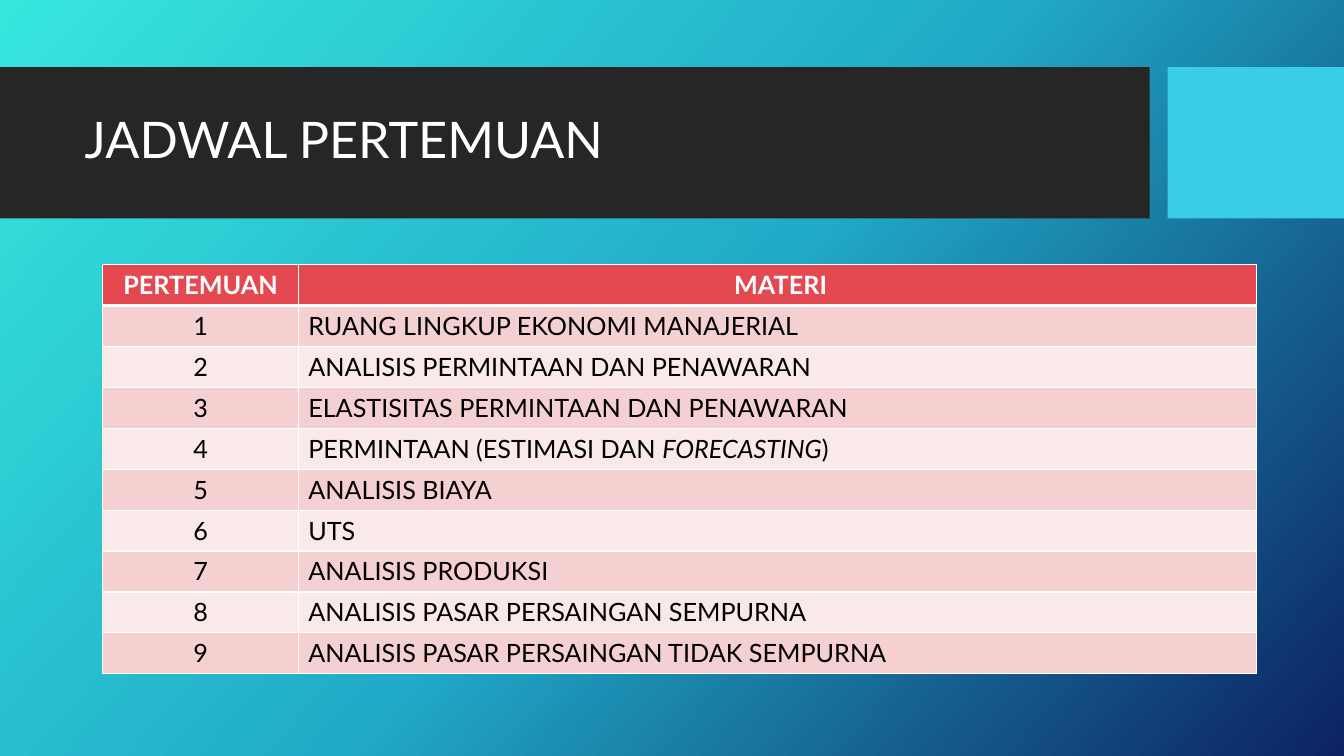
from copy import deepcopy
from dataclasses import dataclass

from lxml import etree
from pptx import Presentation
from pptx.dml.color import RGBColor
from pptx.enum.shapes import MSO_SHAPE
from pptx.enum.text import MSO_ANCHOR, MSO_AUTO_SIZE, PP_ALIGN
from pptx.oxml.ns import qn
from pptx.slide import Slide
from pptx.table import _Cell
from pptx.text.text import Font
from pptx.util import Emu, Pt

RECTANGLE = MSO_SHAPE.RECTANGLE
MIDDLE = MSO_ANCHOR.MIDDLE
NO_AUTOFIT = MSO_AUTO_SIZE.NONE
LEFT = PP_ALIGN.LEFT
CENTER = PP_ALIGN.CENTER

FONT_NAME = "Lato"
WHITE = RGBColor(0xFF, 0xFF, 0xFF)
BLACK = RGBColor(0x00, 0x00, 0x00)
CHARCOAL = RGBColor(0x26, 0x26, 0x26)
SKY = RGBColor(0x39, 0xCD, 0xE7)
RED = RGBColor(0xE4, 0x49, 0x51)
PINK = RGBColor(0xF5, 0xD0, 0xD0)
PALE_PINK = RGBColor(0xFA, 0xE9, 0xE9)
TURQUOISE = RGBColor(0x36, 0xE6, 0xDD)
TEAL = RGBColor(0x21, 0xAB, 0xC8)
NAVY = RGBColor(0x0C, 0x22, 0x63)

EMU_PER_PX = 9525
ROW_HEIGHT = 39
COLUMN_WIDTHS = (186, 913)
TABLE_LEFT, TABLE_TOP = 98, 252


@dataclass(frozen=True)
class Bar:
    left: int
    top: int
    width: int
    height: int
    color: RGBColor


@dataclass(frozen=True)
class Span:
    text: str
    italic: bool = False


BARS = (
    Bar(0, 64, 1095, 144, CHARCOAL),
    Bar(1112, 64, 168, 144, SKY),
)
HEADINGS = ("PERTEMUAN", " MATERI")
TOPICS = (
    (Span("RUANG LINGKUP EKONOMI MANAJERIAL"),),
    (Span("ANALISIS PERMINTAAN DAN PENAWARAN"),),
    (Span("ELASTISITAS PERMINTAAN DAN PENAWARAN"),),
    (Span("PERMINTAAN (ESTIMASI DAN "), Span("FORECASTING", True), Span(")")),
    (Span("ANALISIS BIAYA"),),
    (Span("UTS"),),
    (Span("ANALISIS PRODUKSI"),),
    (Span("ANALISIS PASAR PERSAINGAN SEMPURNA"),),
    (Span("ANALISIS PASAR PERSAINGAN TIDAK SEMPURNA"),),
)


def px(length: int) -> Emu:
    return Emu(length * EMU_PER_PX)


def style_font(font: Font, size: int, color: RGBColor) -> None:
    font.name = FONT_NAME
    font.size = Pt(size)
    font.color.rgb = color


def paint_background(page: Slide) -> None:
    fill = page.background.fill
    fill.gradient()
    fill.gradient_angle = 360 - 42
    stop_list = next(page.element.iter(qn("a:gsLst")))
    stop_list.insert(1, deepcopy(stop_list[0]))
    for stop, position, color in zip(
        fill.gradient_stops, (0, 0.5, 1), (TURQUOISE, TEAL, NAVY)
    ):
        stop.position = position
        stop.color.rgb = color


def draw_bar(page: Slide, bar: Bar) -> None:
    shape = page.shapes.add_shape(
        RECTANGLE, px(bar.left), px(bar.top), px(bar.width), px(bar.height)
    )
    shape.shadow.inherit = False
    shape.fill.solid()
    shape.fill.fore_color.rgb = bar.color
    shape.line.fill.background()


def place_title(page: Slide) -> None:
    title = page.shapes.title
    title.left, title.top = px(71), px(79)
    title.width, title.height = px(1009), px(113)
    title.element.getparent().append(title.element)
    frame = title.text_frame
    frame.text = "JADWAL PERTEMUAN"
    frame.word_wrap = True
    frame.auto_size = NO_AUTOFIT
    frame.vertical_anchor = MIDDLE
    para = frame.paragraphs[0]
    para.alignment = LEFT
    para.line_spacing = 0.9
    style_font(para.runs[0].font, 36, WHITE)


def set_borders(cell: _Cell, top: int, bottom: int) -> None:
    properties = cell._tc.get_or_add_tcPr()
    widths = {"a:lnL": 1, "a:lnR": 1, "a:lnT": top, "a:lnB": bottom}
    for index, (tag, width) in enumerate(widths.items()):
        line = etree.Element(qn(tag), w=str(Pt(width)))
        solid = etree.SubElement(line, qn("a:solidFill"))
        etree.SubElement(solid, qn("a:srgbClr"), val=str(WHITE))
        properties.insert(index, line)


def fill_cell(
    cell: _Cell, spans: tuple[Span, ...], row: int, alignment: PP_ALIGN
) -> None:
    is_header = row == 0
    cell.fill.solid()
    cell.fill.fore_color.rgb = RED if is_header else PINK if row % 2 else PALE_PINK
    set_borders(cell, 3 if row == 1 else 1, 3 if is_header else 1)
    para = cell.text_frame.paragraphs[0]
    para.alignment = alignment
    for span in spans:
        run = para.add_run()
        run.text = span.text
        style_font(run.font, 18, WHITE if is_header else BLACK)
        run.font.bold = is_header
        run.font.italic = span.italic


def draw_schedule(page: Slide) -> None:
    row_count = len(TOPICS) + 1
    table = page.shapes.add_table(
        row_count, len(COLUMN_WIDTHS), px(TABLE_LEFT), px(TABLE_TOP),
        px(sum(COLUMN_WIDTHS)), px(row_count * ROW_HEIGHT),
    ).table
    for column, width in zip(table.columns, COLUMN_WIDTHS):
        column.width = px(width)
    for row in table.rows:
        row.height = px(ROW_HEIGHT)
    for column, heading in enumerate(HEADINGS):
        fill_cell(table.cell(0, column), (Span(heading),), 0, CENTER)
    for number, topic in enumerate(TOPICS, 1):
        fill_cell(table.cell(number, 0), (Span(str(number)),), number, CENTER)
        fill_cell(table.cell(number, 1), topic, number, LEFT)


def main() -> None:
    deck = Presentation()
    deck.slide_width, deck.slide_height = px(1280), px(720)
    page = deck.slides.add_slide(deck.slide_layouts.get_by_name("Title Only"))
    paint_background(page)
    for bar in BARS:
        draw_bar(page, bar)
    place_title(page)
    draw_schedule(page)
    deck.save("out.pptx")


if __name__ == "__main__":
    main()
